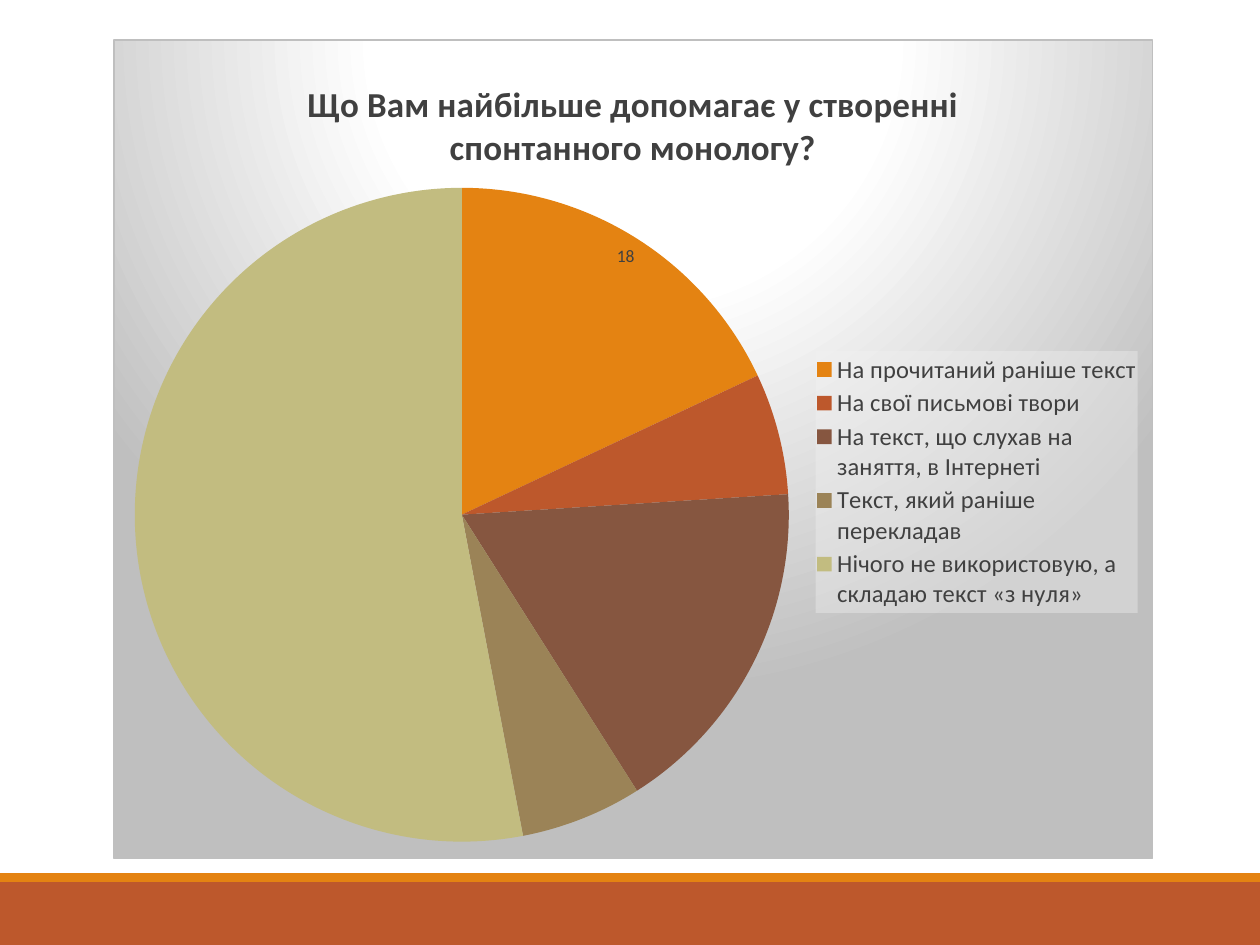
"""Build a survey slide with one pie chart above a two-colour footer band."""
import dataclasses

import pptx
import pptx.chart.data
import pptx.dml.color
import pptx.enum.chart
import pptx.enum.shapes
import pptx.oxml
import pptx.oxml.ns
import pptx.util

Pt = pptx.util.Pt
qn = pptx.oxml.ns.qn
NAMESPACES = pptx.oxml.ns.nsdecls("c", "a")

QUESTION = "Що Вам найбільше допомагає у створенні спонтанного монологу?"
ANSWERS = {
    "На прочитаний раніше текст": 18,
    "На свої письмові твори": 6,
    "На текст, що слухав на заняття, в Інтернеті": 17,
    "Текст, який раніше перекладав": 6,
    "Нічого не використовую, а складаю текст «з нуля»": 53,
}


@dataclasses.dataclass(frozen=True)
class Theme:
    font: str = "Calibri"
    text: str = "404040"
    white: str = "FFFFFF"
    border: str = "BFBFBF"
    label_fill: str = "4D4D4D"
    legend_fill: str = "F2F2F2"
    accents: tuple = ("E48312", "BD582C", "865640", "9B8357", "C2BC80")
    title_size: int = 20
    legend_size: int = 14
    label_size: int = 10


def rgb(value):
    return pptx.dml.color.RGBColor.from_string(value)


def set_font(font, theme, size, color, bold):
    values = {"name": theme.font, "size": Pt(size), "bold": bold}
    for name, value in values.items():
        setattr(font, name, value)
    font.color.rgb = rgb(color)


def chart_xml(tag, content="", attributes=""):
    return pptx.oxml.parse_xml(f"<c:{tag} {NAMESPACES} {attributes}>{content}</c:{tag}>")


def solid_fill(color, alpha=100):
    return (f'<a:solidFill><a:srgbClr val="{color}"><a:alpha val="{alpha * 1000}"/>'
            "</a:srgbClr></a:solidFill>")


def set_layout(element, **fractions):
    """Place a chart part by fractions of the chart size."""
    old = element.find(qn("c:layout"))
    if old is not None:
        element.remove(old)
    modes = '<c:xMode val="edge"/><c:yMode val="edge"/>'
    if element.tag == qn("c:plotArea"):
        modes = '<c:layoutTarget val="inner"/>' + modes
    places = "".join(f'<c:{name} val="{value}"/>' for name, value in fractions.items())
    layout = chart_xml("layout", f"<c:manualLayout>{modes}{places}</c:manualLayout>")
    overlay = element.find(qn("c:overlay"))
    if overlay is None:
        element.insert(0, layout)
    else:
        overlay.addprevious(layout)


class SlideBuilder:
    def __init__(self, slide, theme):
        self.slide = slide
        self.theme = theme

    def band(self, left, top, width, height, color):
        shape = self.slide.shapes.add_shape(
            pptx.enum.shapes.MSO_SHAPE.RECTANGLE, Pt(left), Pt(top), Pt(width), Pt(height))
        shape.shadow.inherit = False
        shape.fill.solid()
        shape.fill.fore_color.rgb = rgb(color)
        shape.line.fill.background()

    def pie(self, left, top, width, height, title, answers):
        data = pptx.chart.data.CategoryChartData()
        data.categories = list(answers)
        data.add_series("Series 1", list(answers.values()))
        chart = self.slide.shapes.add_chart(
            pptx.enum.chart.XL_CHART_TYPE.PIE,
            Pt(left), Pt(top), Pt(width), Pt(height), data).chart
        set_font(chart.font, self.theme, self.theme.label_size, self.theme.text, False)
        plot = chart.plots[0]
        plot.vary_by_categories = True
        for index, color in enumerate(self.theme.accents):
            fill = plot.series[0].points[index].format.fill
            fill.solid()
            fill.fore_color.rgb = rgb(color)
        set_layout(chart.element.find(".//" + qn("c:plotArea")),
                   x=0.02, y=0.18, w=0.63, h=0.8)
        self.title(chart, title)
        self.legend(chart)
        self.labels(plot)
        self.background(chart)

    def title(self, chart, text):
        chart.has_title = True
        paragraph = chart.chart_title.text_frame.paragraphs[0]
        run = paragraph.add_run()
        run.text = text
        set_font(run.font, self.theme, self.theme.title_size, self.theme.text, True)
        set_layout(chart.element.find(".//" + qn("c:title")), x=0.18, y=0.04)

    def legend(self, chart):
        chart.has_legend = True
        values = {"position": pptx.enum.chart.XL_LEGEND_POSITION.RIGHT,
                  "include_in_layout": False}
        for name, value in values.items():
            setattr(chart.legend, name, value)
        set_font(chart.legend.font, self.theme, self.theme.legend_size,
                 self.theme.text, False)
        element = chart.element.find(".//" + qn("c:legend"))
        set_layout(element, x=0.68, y=0.38, w=0.31, h=0.32)
        element.find(qn("c:txPr")).addprevious(
            chart_xml("spPr", solid_fill(self.theme.legend_fill, 39)))

    def labels(self, plot):
        plot.has_data_labels = True
        labels = plot.data_labels
        values = {"show_percentage": True, "show_value": False,
                  "number_format": "0%", "number_format_is_linked": False,
                  "position": pptx.enum.chart.XL_LABEL_POSITION.CENTER}
        for name, value in values.items():
            setattr(labels, name, value)
        set_font(labels.font, self.theme, self.theme.label_size, self.theme.white, True)
        labels_element = plot.series[0].points[0].data_label.font and None
        if labels_element is None:
            labels_element = labels._element
        labels_element.find(qn("c:txPr")).addprevious(
            chart_xml("spPr", solid_fill(self.theme.label_fill)))

    def background(self, chart):
        stops = ((0, self.theme.white), (39, self.theme.white), (100, self.theme.border))
        gradient = "".join(
            f'<a:gs pos="{position * 1000}"><a:srgbClr val="{color}"/></a:gs>'
            for position, color in stops)
        content = (
            f'<a:gradFill><a:gsLst>{gradient}</a:gsLst><a:path path="circle">'
            '<a:fillToRect l="50000" t="-80000" r="50000" b="180000"/></a:path></a:gradFill>'
            f'<a:ln w="{int(Pt(0.75))}">{solid_fill(self.theme.border)}</a:ln>')
        element = chart.element.find(qn("c:chart"))
        element.addprevious(chart_xml("roundedCorners", attributes='val="0"'))
        element.addnext(chart_xml("spPr", content))


def main():
    theme = Theme()
    presentation = pptx.Presentation()
    presentation.slide_width, presentation.slide_height = Pt(720), Pt(540)
    slide = presentation.slides.add_slide(presentation.slide_layouts[6])
    builder = SlideBuilder(slide, theme)
    builder.band(0, 504, 720, 36, theme.accents[1])
    builder.band(0, 499, 720, 5, theme.accents[0])
    builder.pie(64.8, 22.5, 594, 468.5, QUESTION, ANSWERS)
    presentation.save("out.pptx")


if __name__ == "__main__":
    main()
